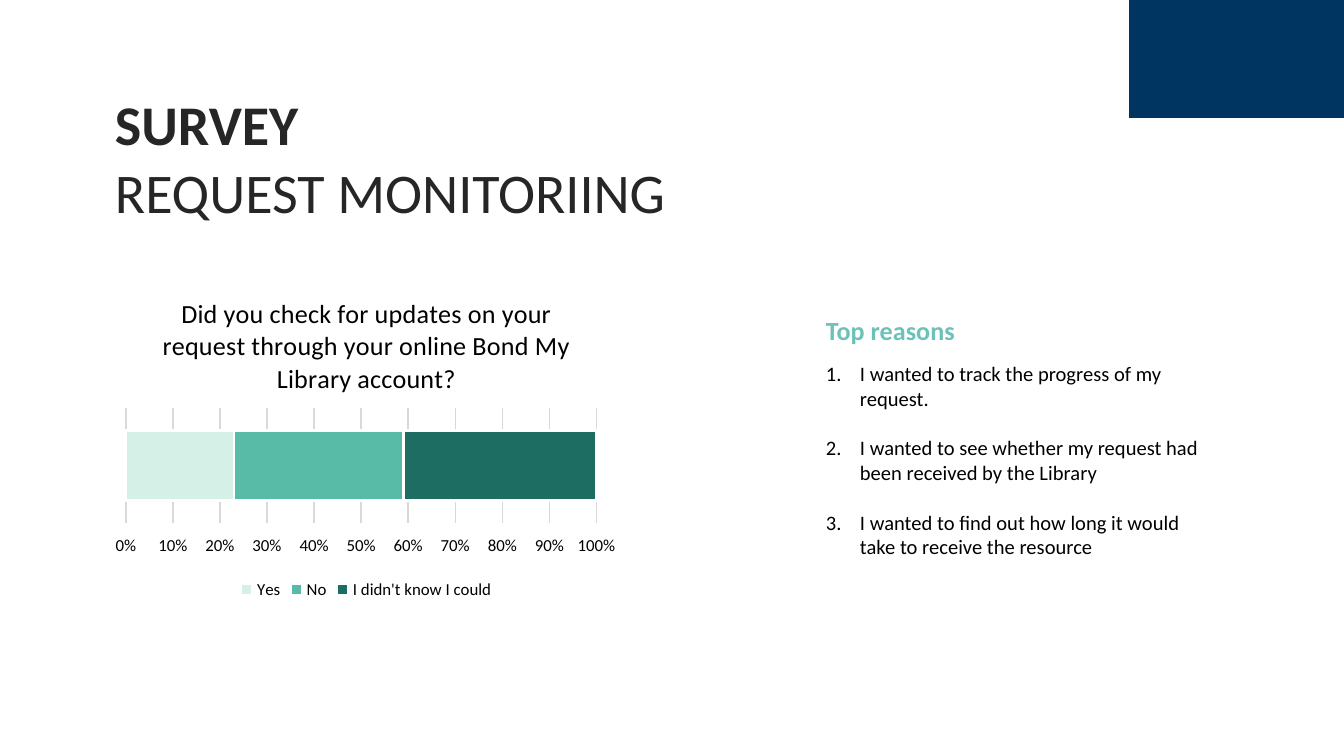
from lxml import etree
from pptx import Presentation
from pptx import util as u
from pptx.chart.data import CategoryChartData
from pptx.dml.color import RGBColor
from pptx.enum import chart as charts, shapes
from pptx.oxml import parse_xml
from pptx.oxml.ns import nsdecls, qn

EMU_PER_PX = 914400 / 134.4
FONT = "Calibri"
NAVY = RGBColor(0x00, 0x35, 0x62)
CHARCOAL = RGBColor(0x26, 0x26, 0x26)
BLACK = RGBColor(0x00, 0x00, 0x00)
WHITE = RGBColor(0xFF, 0xFF, 0xFF)
TEAL = RGBColor(0x6C, 0xC2, 0xB8)
GRID_GREY = RGBColor(0xD9, 0xD9, 0xD9)

QUESTION = "Did you check for updates on your request through your online Bond My Library account?"
ANSWERS = [
    ("Yes", 23, RGBColor(0xD5, 0xF1, 0xE7)),
    ("No", 36, RGBColor(0x57, 0xBB, 0xA7)),
    ("I didn't know I could", 41, RGBColor(0x1E, 0x6D, 0x63)),
]
REASONS = [
    "I wanted to track the progress of my request.",
    "I wanted to see whether my request had been received by the Library",
    "I wanted to find out how long it would take to receive the resource",
]


def px(length):
    return u.Emu(round(length * EMU_PER_PX))


def box(*lengths):
    return [px(length) for length in lengths]


def set_font(font, size, color, bold=False):
    font.name = FONT
    font.size = u.Pt(size)
    font.bold = bold
    font.color.rgb = color


def add_corner_block(slide):
    block = slide.shapes.add_shape(shapes.MSO_SHAPE.RECTANGLE, *box(1129, 0, 215, 118))
    block.shadow.inherit = False
    block.fill.solid()
    block.fill.fore_color.rgb = NAVY
    block.line.fill.background()


def add_text(slide, bounds, lines):
    """Add a wrapping text box and return its paragraphs, one per line."""
    frame = slide.shapes.add_textbox(*box(*bounds)).text_frame
    frame.word_wrap = True
    frame.margin_left = frame.margin_right = px(10)
    frame.margin_top = frame.margin_bottom = px(5)
    frame.text = "\n".join(lines)
    return frame.paragraphs


def number_paragraph(paragraph):
    properties = paragraph._p.get_or_add_pPr()
    properties.set("marL", str(px(34)))
    properties.set("indent", str(-px(34)))
    bullet = etree.SubElement(properties, qn("a:buAutoNum"))
    bullet.set("type", "arabicPeriod")


def place_plot(chart, x, y, width, height):
    """Fix the inner plot area, in fractions of the chart."""
    plot_area = chart._chartSpace.chart.plotArea
    for old_layout in plot_area.findall(qn("c:layout")):
        plot_area.remove(old_layout)
    plot_area.insert(0, parse_xml(
        f'<c:layout {nsdecls("c")}><c:manualLayout><c:layoutTarget val="inner"/>'
        '<c:xMode val="edge"/><c:yMode val="edge"/>'
        f'<c:x val="{x}"/><c:y val="{y}"/><c:w val="{width}"/><c:h val="{height}"/>'
        '</c:manualLayout></c:layout>'))


def style_percent_axis(axis):
    axis.minimum_scale, axis.maximum_scale, axis.major_unit = 0, 1, 0.1
    axis.major_tick_mark = charts.XL_TICK_MARK.OUTSIDE
    axis.tick_labels.number_format = "0%"
    axis.tick_labels.number_format_is_linked = False
    set_font(axis.tick_labels.font, 9, BLACK)
    axis.format.line.fill.background()
    axis.has_major_gridlines = True
    axis.major_gridlines.format.line.color.rgb = GRID_GREY
    axis.major_gridlines.format.line.width = u.Pt(0.75)


def add_answer_chart(slide):
    data = CategoryChartData()
    data.categories = ["1"]
    for name, value, _ in ANSWERS:
        data.add_series(name, [value])
    chart = slide.shapes.add_chart(
        charts.XL_CHART_TYPE.BAR_STACKED_100, *box(105, 277, 523, 328), data).chart
    set_font(chart.font, 10, BLACK)

    chart.has_title = True
    chart.chart_title.include_in_layout = False
    title = chart.chart_title.text_frame
    title.text = QUESTION
    set_font(title.paragraphs[0].font, 14, BLACK)

    chart.has_legend = True
    chart.legend.position = charts.XL_LEGEND_POSITION.BOTTOM
    chart.legend.include_in_layout = False
    set_font(chart.legend.font, 9, BLACK)

    chart.category_axis.visible = False
    style_percent_axis(chart.value_axis)

    plot = chart.plots[0]
    plot.gap_width, plot.overlap = 63, 100
    plot.vary_by_categories = False
    for series, (_, _, color) in zip(plot.series, ANSWERS):
        series.format.fill.solid()
        series.format.fill.fore_color.rgb = color
        series.format.line.color.rgb = WHITE
        series.format.line.width = u.Pt(1.5)
    place_plot(chart, 0.04, 0.4, 0.9, 0.35)


def add_reasons(slide):
    for index, paragraph in enumerate(add_text(slide, (816, 356, 400, 262), REASONS)):
        number_paragraph(paragraph)
        set_font(paragraph.font, 11, BLACK)
        if index:
            paragraph.space_before = u.Pt(13.4)

    heading = add_text(slide, (816, 294, 301, 42), ["Top reasons"])[0]
    heading.line_spacing = 1.5
    set_font(heading.font, 14, TEAL, bold=True)


def main():
    presentation = Presentation()
    presentation.slide_width, presentation.slide_height = box(1344, 756)
    slide = presentation.slides.add_slide(presentation.slide_layouts[6])

    add_corner_block(slide)
    topic, subject = add_text(slide, (105, 85, 996, 132), ["SURVEY", "REQUEST MONITORIING"])
    set_font(topic.font, 30, CHARCOAL, bold=True)
    set_font(subject.font, 30, CHARCOAL)
    add_answer_chart(slide)
    add_reasons(slide)
    presentation.save("out.pptx")


if __name__ == "__main__":
    main()
